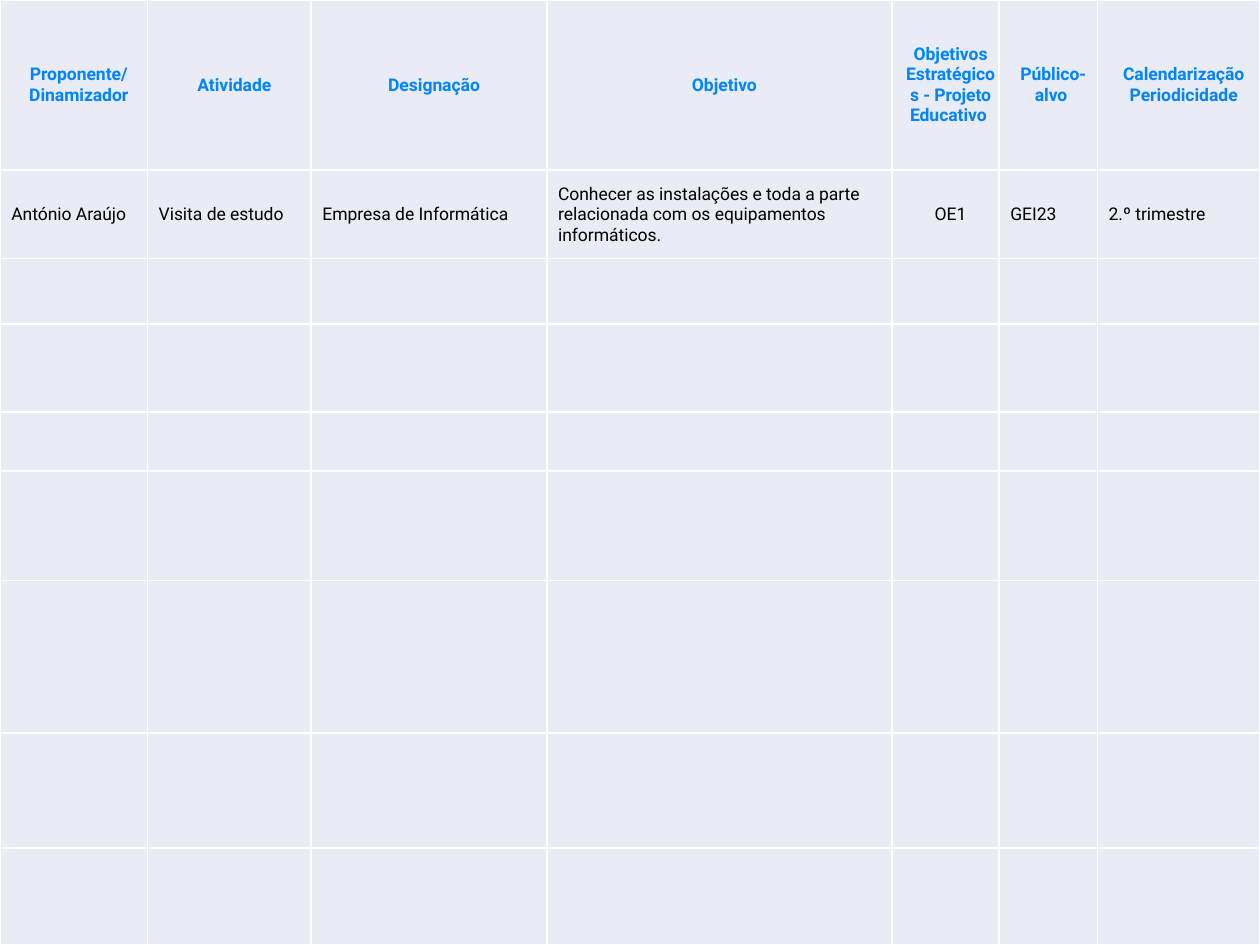
from dataclasses import dataclass

from lxml import etree
from pptx import Presentation
from pptx.dml.color import RGBColor
from pptx.enum.text import MSO_ANCHOR, PP_ALIGN
from pptx.oxml.ns import qn
from pptx.table import _Cell
from pptx.util import Inches, Pt

CENTER, LEFT = PP_ALIGN.CENTER, PP_ALIGN.LEFT
MIDDLE = MSO_ANCHOR.MIDDLE


@dataclass(frozen=True)
class Theme:
    font: str = "Roboto"
    size: int = 10
    heading: str = "0084FF"
    body: str = "000000"
    cell: str = "E9EBF5"
    border: str = "FFFFFF"
    border_width: int = 1
    indent: float = 0.08


@dataclass(frozen=True)
class Column:
    width: float
    heading: str
    activity: str
    align: PP_ALIGN = LEFT


THEME = Theme()
COLUMNS = [
    Column(1.17, "Proponente/ Dinamizador", "António Araújo"),
    Column(1.3, "Atividade", "Visita de estudo"),
    Column(1.87, "Designação", "Empresa de Informática"),
    Column(2.74, "Objetivo", "Conhecer as instalações e toda a parte relacionada "
           "com os equipamentos informáticos."),
    Column(0.85, "Objetivos Estratégicos - Projeto Educativo ", "OE1", CENTER),
    Column(0.78, "Público-alvo ", "GEI23"),
    Column(1.29, "Calendarização Periodicidade", "2.º trimestre"),
]
ROW_HEIGHTS = [1.35, 0.7, 0.52, 0.7, 0.47, 0.87, 1.21, 0.91, 0.77]


def style_cell(cell: _Cell) -> None:
    """Give the cell its borders and fill; borders must come first in the XML."""
    tc_pr = cell._tc.get_or_add_tcPr()
    for side in ("a:lnL", "a:lnR", "a:lnT", "a:lnB"):
        ln = etree.SubElement(tc_pr, qn(side), w=str(Pt(THEME.border_width)))
        fill = etree.SubElement(ln, qn("a:solidFill"))
        etree.SubElement(fill, qn("a:srgbClr"), val=THEME.border)
    cell.fill.solid()
    cell.fill.fore_color.rgb = RGBColor.from_string(THEME.cell)


def write_cell(cell: _Cell, text: str, align: PP_ALIGN, color: str, bold: bool) -> None:
    cell.vertical_anchor = MIDDLE
    inset = Inches(0.01 if align == LEFT else 0)
    cell.margin_left = cell.margin_right = cell.margin_top = inset
    cell.margin_bottom = 0
    p = cell.text_frame.paragraphs[0]
    p.alignment = align
    p_pr = p._p.get_or_add_pPr()
    p_pr.set("marL", str(Inches(THEME.indent)))
    p_pr.set("indent", "0")
    r = p.add_run()
    r.text = text
    r.font.name = THEME.font
    r.font.size = Pt(THEME.size)
    r.font.bold = bold
    r.font.color.rgb = RGBColor.from_string(color)


def main() -> None:
    prs = Presentation()
    prs.slide_width, prs.slide_height = Inches(10), Inches(7.5)
    s = prs.slides.add_slide(prs.slide_layouts[6])
    table = s.shapes.add_table(len(ROW_HEIGHTS), len(COLUMNS), 0, 0,
                               prs.slide_width, prs.slide_height).table
    table.first_row = table.horz_banding = False

    for row, height in zip(table.rows, ROW_HEIGHTS):
        row.height = Inches(height)
    for cell in table.iter_cells():
        style_cell(cell)
    for i, column in enumerate(COLUMNS):
        table.columns[i].width = Inches(column.width)
        write_cell(table.cell(0, i), column.heading, CENTER, THEME.heading, True)
        write_cell(table.cell(1, i), column.activity, column.align, THEME.body, False)

    prs.save("out.pptx")


if __name__ == "__main__":
    main()
